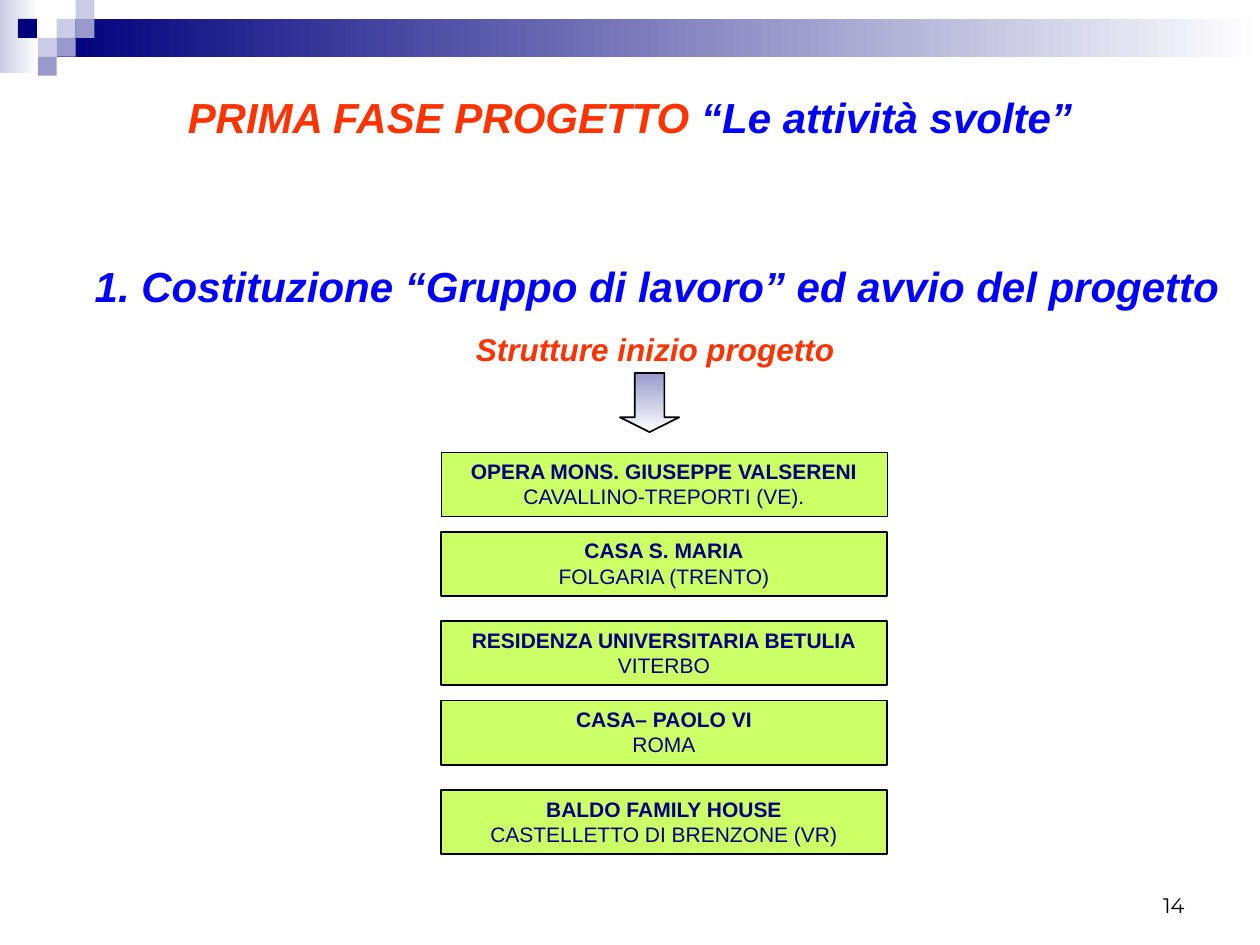
"""Build the slide on the first project phase and its starting facilities."""
from lxml.etree import SubElement
from pptx import Presentation
from pptx.dml.color import RGBColor
from pptx.enum.shapes import MSO_SHAPE as Shape
from pptx.enum.text import MSO_ANCHOR as Anchor, MSO_AUTO_SIZE as AutoSize, PP_ALIGN as Align
from pptx.oxml.ns import qn
from pptx.util import Inches, Pt

NAVY, LILAC, PALE, WHITE = "00007D", "9999CC", "CCCCE6", "FFFFFF"
BLUE, ORANGE, LIME, BLACK = "0000FF", "FF3300", "CCFF66", "000000"


def paint(target, *colours):
    """Fill a shape with one colour, or with a gradient between two."""
    if len(colours) == 1:
        target.fill.solid()
        target.fill.fore_color.rgb = RGBColor.from_string(colours[0])
        return
    target.fill.gradient()
    target.fill.gradient_angle = 0
    for stop, colour in zip(target.fill.gradient_stops, colours):
        stop.color.rgb = RGBColor.from_string(colour)


def write(box, lines, size, align=Align.CENTER, anchor=Anchor.TOP, font="Arial", italic=False):
    """Write lines, each a list of (text, colour, bold) spans."""
    frame = box.text_frame
    frame.word_wrap, frame.auto_size = True, AutoSize.NONE
    frame.vertical_anchor = anchor
    for number, spans in enumerate(lines):
        para = frame.add_paragraph() if number else frame.paragraphs[0]
        para.alignment, para.space_before = align, Pt(0)
        para.font.name, para.font.size, para.font.italic = font, Pt(size), italic
        for text, colour, bold in spans:
            span = para.add_run()
            span.text, span.font.bold = text, bold
            span.font.color.rgb = RGBColor.from_string(colour)


deck = Presentation()
deck.slide_width, deck.slide_height = Inches(10), Inches(7.5)
page = deck.slides.add_slide(deck.slide_layouts[1])
shapes = page.shapes

TILE = 0.15
decorations = [
    (0, 0, 0.31, 0.58, (PALE, WHITE)),
    (3 * TILE, TILE, 10 - 3 * TILE, 2 * TILE, (NAVY, WHITE)),
]
tiles = [(3, 1, PALE), (4, 0, PALE), (4, 1, LILAC), (2, 2, PALE),
         (0.95, 1, NAVY), (3, 2, LILAC), (2, 3, LILAC)]
decorations += [(col * TILE, row * TILE, TILE, TILE, (colour,)) for col, row, colour in tiles]
for left, top, width, height, colours in decorations:
    tile = shapes.add_shape(Shape.RECTANGLE, *map(Inches, (left, top, width, height)))
    tile.shadow.inherit = False
    tile.line.fill.background()
    paint(tile, *colours)

title, heading = page.placeholders
for box, area in ((title, (0.43, 0.68, 9.14, 0.55)), (heading, (0.43, 2.02, 9.57, 0.63))):
    box.left, box.top, box.width, box.height = map(Inches, area)
write(title, [[("PRIMA FASE PROGETTO ", ORANGE, True), ("“Le attività svolte”", BLUE, True)]],
      24, italic=True)
write(heading, [[("1. Costituzione “Gruppo di lavoro” ed avvio del progetto", BLUE, True)]],
      24, italic=True)
properties = heading.text_frame.paragraphs[0]._p.get_or_add_pPr()
properties.set("marL", "0")
properties.set("indent", "0")
bullet = SubElement(properties, qn("a:buNone"))
properties.find(qn("a:defRPr")).addprevious(bullet)

subtitle = shapes.add_textbox(*map(Inches, (3.35, 2.57, 3.7, 0.39)))
write(subtitle, [[("Strutture inizio progetto", ORANGE, True)]], 18, italic=True)

arrow = shapes.add_shape(Shape.RIGHT_ARROW, *map(Inches, (4.92, 2.96, 0.47, 0.47)))
arrow.rotation = 90
arrow.adjustments[1] = 0.25
arrow.shadow.inherit = False
paint(arrow, LILAC, WHITE)
arrow.line.color.rgb, arrow.line.width = RGBColor.from_string(BLACK), Pt(1)

facilities = [
    ("OPERA MONS. GIUSEPPE VALSERENI", "CAVALLINO-TREPORTI (VE)."),
    ("CASA S. MARIA", "FOLGARIA (TRENTO)"),
    ("RESIDENZA UNIVERSITARIA BETULIA", "VITERBO"),
    ("CASA– PAOLO VI", "ROMA"),
    ("BALDO FAMILY HOUSE", "CASTELLETTO DI BRENZONE (VR)"),
]
for index, (name, place) in enumerate(facilities):
    pair, second = divmod(index, 2)
    top = 3.59 + 1.34 * pair + 0.63 * second
    card = shapes.add_shape(Shape.RECTANGLE, *map(Inches, (3.5, top, 3.54, 0.51)))
    card.shadow.inherit = False
    paint(card, LIME)
    card.line.color.rgb = RGBColor.from_string(BLACK)
    card.line.width = Pt(1 if index else 0.5)
    write(card, [[(name, NAVY, True)], [(place, NAVY, False)]], 12)

number = shapes.add_textbox(*map(Inches, (7.17, 6.83, 2.33, 0.5)))
write(number, [[("14", BLACK, False)]], 12, Align.RIGHT, Anchor.BOTTOM, "Montserrat")

deck.save("out.pptx")
